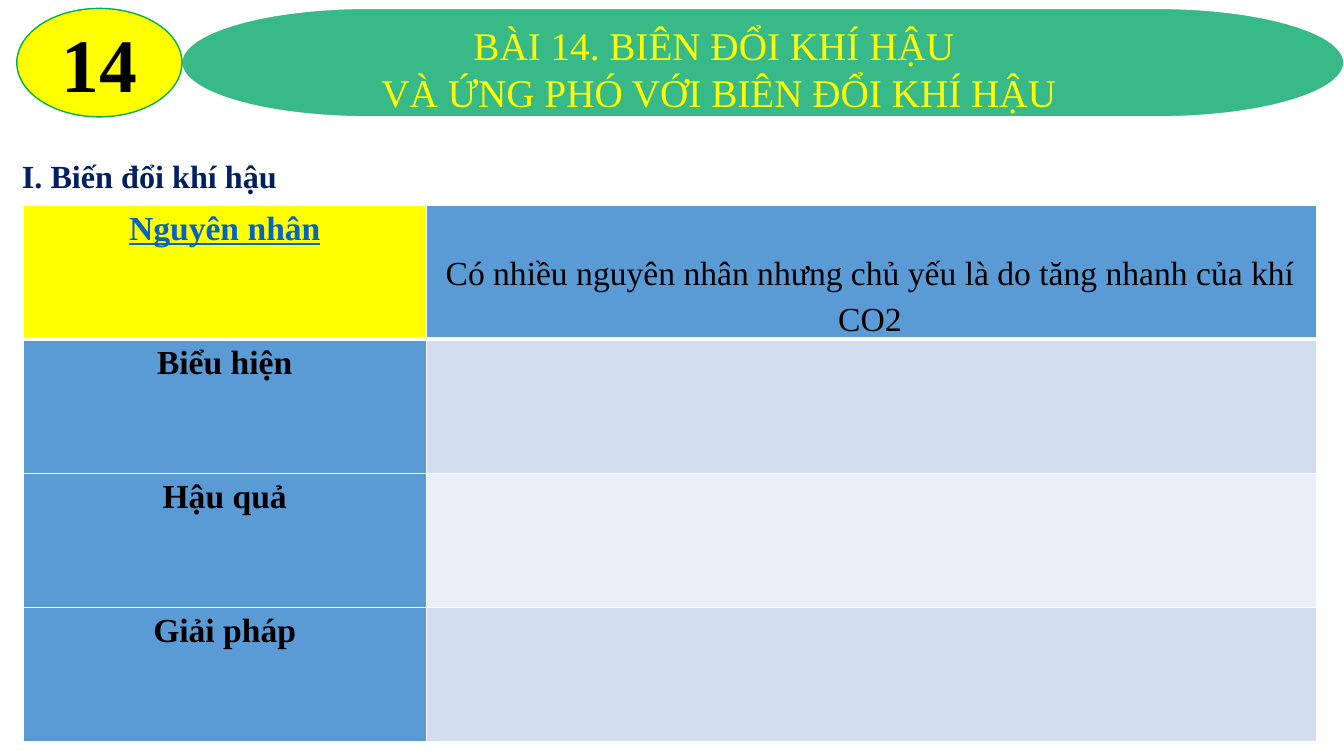
from pptx import Presentation
from pptx.dml.color import RGBColor
from pptx.enum.shapes import MSO_SHAPE as Shape
from pptx.enum.text import MSO_ANCHOR as Anchor, PP_ALIGN as Align
from pptx.oxml import parse_xml
from pptx.oxml.ns import nsdecls
from pptx.util import Pt

FONT = "Times New Roman"
BLACK = RGBColor(0x00, 0x00, 0x00)
WHITE = RGBColor(0xFF, 0xFF, 0xFF)
YELLOW = RGBColor(0xFF, 0xFF, 0x00)
GREEN = RGBColor(0x37, 0xB9, 0x88)
RIM_GREEN = RGBColor(0x00, 0xB0, 0x50)
NAVY = RGBColor(0x00, 0x20, 0x60)
LINK_BLUE = RGBColor(0x05, 0x63, 0xC1)
BLUE = RGBColor(0x5B, 0x9B, 0xD5)
BAND_DARK = RGBColor(0xD2, 0xDE, 0xEF)
BAND_LIGHT = RGBColor(0xEA, 0xEF, 0xF7)

# Content
LESSON_NUMBER = "14"
LESSON_TITLE = ["BÀI 14. BIÊN ĐỔI KHÍ HẬU ", "VÀ ỨNG PHÓ VỚI BIÊN ĐỔI KHÍ HẬU"]
SECTION = "I. Biến đổi khí hậu"
CAUSE = "Có nhiều nguyên nhân nhưng chủ yếu là do tăng nhanh của khí CO2"
# label, label colour, underlined, label fill, answer fill
TOPICS = [
    ("Nguyên nhân", LINK_BLUE, True, YELLOW, BLUE),
    ("Biểu hiện", BLACK, False, BLUE, BAND_DARK),
    ("Hậu quả", BLACK, False, BLUE, BAND_LIGHT),
    ("Giải pháp", BLACK, False, BLUE, BAND_DARK),
]

# Layout in points
COLUMN_WIDTHS = (288, 635.76)
ROW_HEIGHT = 95.76
TABLE_LEFT, TABLE_TOP = 16.5, 146.5
BANNER_TOP, BANNER_HEIGHT = 6, 77.5


def write(frame, lines, size, color, bold=False, underline=False,
          align=Align.CENTER, spacing=None):
    frame.word_wrap = True
    for index, line in enumerate(lines):
        paragraph = frame.add_paragraph() if index else frame.paragraphs[0]
        paragraph.alignment = align
        if spacing:
            paragraph.line_spacing = spacing
        run = paragraph.add_run()
        run.text = line
        font = run.font
        font.name, font.size, font.bold = FONT, Pt(size), bold
        font.underline = underline
        font.color.rgb = color


def add_banner_part(kind, left, width, fill, rim):
    part = slide.shapes.add_shape(kind, Pt(left), Pt(BANNER_TOP), Pt(width), Pt(BANNER_HEIGHT))
    part.shadow.inherit = False
    part.fill.solid()
    part.fill.fore_color.rgb = fill
    part.line.color.rgb = rim
    part.line.width = Pt(1)
    return part


def add_text(left, top, width, height, lines, size, color, **style):
    box = slide.shapes.add_textbox(Pt(left), Pt(top), Pt(width), Pt(height))
    write(box.text_frame, lines, size, color, **style)


def paint_cell(cell, fill, top_width, bottom_width):
    cell.fill.solid()
    cell.fill.fore_color.rgb = fill
    sides = (("L", 1), ("R", 1), ("T", top_width), ("B", bottom_width))
    for place, (side, width) in enumerate(sides):
        border = parse_xml(
            f'<a:ln{side} {nsdecls("a")} w="{Pt(width)}"><a:solidFill>'
            f'<a:srgbClr val="{WHITE}"/></a:solidFill></a:ln{side}>')
        cell._tc.get_or_add_tcPr().insert(place, border)


deck = Presentation()
deck.slide_width, deck.slide_height = Pt(960), Pt(540)
slide = deck.slides.add_slide(deck.slide_layouts[6])

# Section heading
add_text(8.6, 111, 280, 36, [SECTION], 23, NAVY, bold=True, align=Align.LEFT, spacing=0.9)

# Topic table
table = slide.shapes.add_table(
    len(TOPICS), len(COLUMN_WIDTHS), Pt(TABLE_LEFT), Pt(TABLE_TOP),
    Pt(sum(COLUMN_WIDTHS)), Pt(ROW_HEIGHT * len(TOPICS))).table
table.first_row = table.horz_banding = False
for column, width in zip(table.columns, COLUMN_WIDTHS):
    column.width = Pt(width)
for index, (label, color, underlined, label_fill, answer_fill) in enumerate(TOPICS):
    table.rows[index].height = Pt(ROW_HEIGHT)
    label_cell, answer_cell = table.cell(index, 0), table.cell(index, 1)
    for cell, fill in ((label_cell, label_fill), (answer_cell, answer_fill)):
        paint_cell(cell, fill, 3 if index == 1 else 1, 3 if index == 0 else 1)
    label_cell.margin_left = label_cell.margin_right = Pt(5)
    label_cell.margin_top = label_cell.margin_bottom = Pt(0)
    write(label_cell.text_frame, [label], 24, color, bold=True,
          underline=underlined, spacing=1.15)

# Answer for the first topic
add_text(302.4, 172, 638, 71.3, [CAUSE], 24, BLACK, spacing=1.15)

# Lesson banner
add_banner_part(Shape.FLOWCHART_TERMINATOR, 129.8, 830.2, GREEN, WHITE)
badge = add_banner_part(Shape.OVAL, 12, 118, YELLOW, RIM_GREEN)
badge.text_frame.vertical_anchor = Anchor.MIDDLE
write(badge.text_frame, [LESSON_NUMBER], 54, BLACK, bold=True)
add_text(155.5, 11.5, 715.7, 75, LESSON_TITLE, 28, YELLOW)

deck.save("out.pptx")
